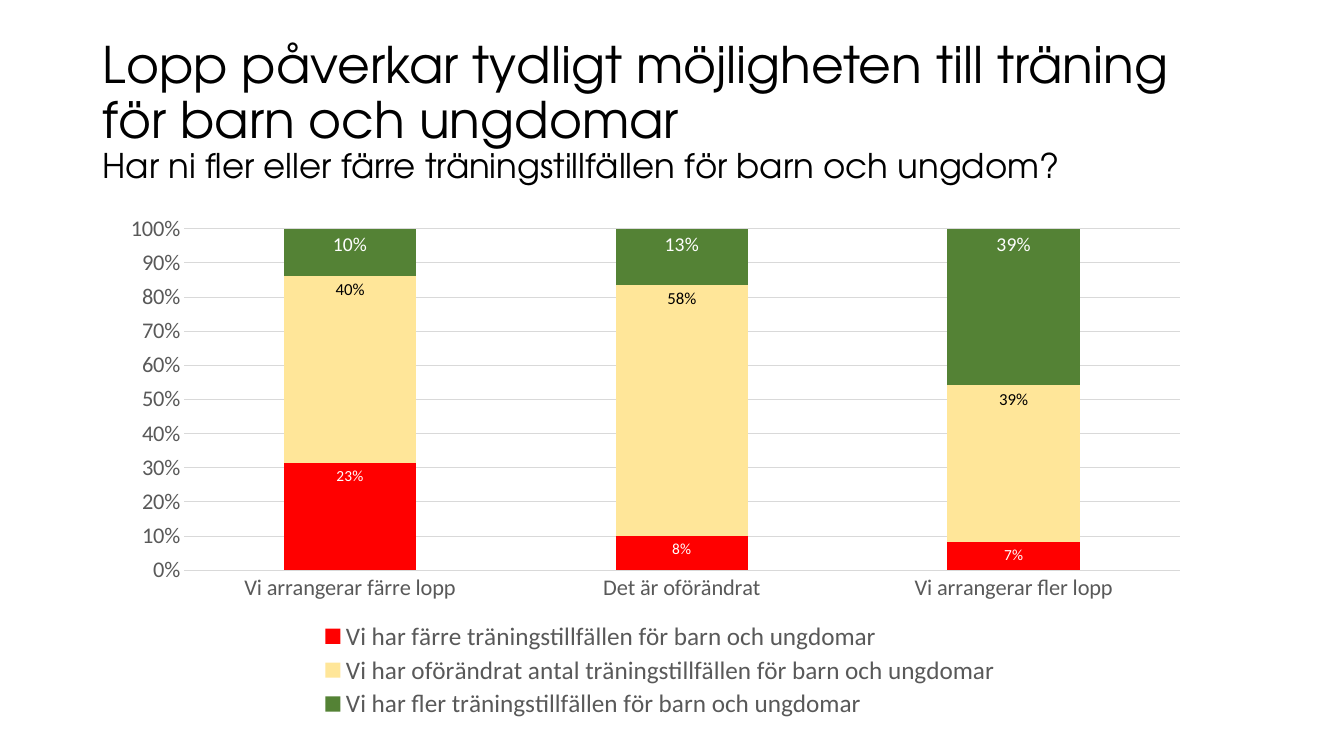
import pptx
import pptx.chart.data
import pptx.dml.color
import pptx.enum.chart
import pptx.enum.text
import pptx.oxml
import pptx.oxml.ns
import pptx.util

COLORS = {
    "black": "000000", "white": "FFFFFF", "gray": "595959", "grid": "D9D9D9",
    "fewer": "FF0000", "unchanged": "FFE699", "more": "548235",
}
WIDTH, HEIGHT = 13.33, 7.5
TITLE_FONT, CHART_FONT = "TeX Gyre Adventor", "Calibri"

CATEGORIES = ["Vi arrangerar färre lopp", "Det är oförändrat", "Vi arrangerar fler lopp"]
# name, values, fill, label size, label color
ANSWERS = [
    ("Vi har färre träningstillfällen för barn och ungdomar",
     (0.23, 0.08, 0.07), "fewer", 11, "white"),
    ("Vi har oförändrat antal träningstillfällen för barn och ungdomar",
     (0.40, 0.58, 0.39), "unchanged", 12, "black"),
    ("Vi har fler träningstillfällen för barn och ungdomar",
     (0.10, 0.13, 0.39), "more", 14, "white"),
]


def set_all(target, values):
    for name, value in values.items():
        setattr(target, name, value)


def rgb(color):
    return pptx.dml.color.RGBColor.from_string(COLORS[color])


def place_chart_part(parent, index, shares, inner=False):
    """Fix a plot area or legend at shares (x, y, w, h) of the chart."""
    for old in parent.findall(pptx.oxml.ns.qn("c:layout")):
        parent.remove(old)
    target = '<c:layoutTarget val="inner"/>' if inner else ""
    modes = '<c:xMode val="edge"/><c:yMode val="edge"/>'
    sizes = "".join(f'<c:{key} val="{share}"/>' for key, share in zip("xywh", shares))
    parent.insert(index, pptx.oxml.parse_xml(
        f'<c:layout {pptx.oxml.ns.nsdecls("c")}><c:manualLayout>'
        f"{target}{modes}{sizes}</c:manualLayout></c:layout>"))


class SlideBuilder:
    def __init__(self, presentation):
        self.slide = presentation.slides.add_slide(presentation.slide_layouts[5])

    def box(self, left, top, width, height):
        """Turn shares of the slide's size into lengths."""
        return [pptx.util.Inches(share * side) for share, side in
                ((left, WIDTH), (top, HEIGHT), (width, WIDTH), (height, HEIGHT))]

    def style_font(self, font, name, size, color):
        set_all(font, {"name": name, "size": pptx.util.Pt(size)})
        font.color.rgb = rgb(color)

    def title(self, shares, lines):
        shape = self.slide.shapes.title
        set_all(shape, dict(zip(("left", "top", "width", "height"), self.box(*shares))))
        set_all(shape.text_frame, {
            "word_wrap": True,
            "auto_size": pptx.enum.text.MSO_AUTO_SIZE.NONE,
            "vertical_anchor": pptx.enum.text.MSO_ANCHOR.MIDDLE,
        })
        paragraph = shape.text_frame.paragraphs[0]
        set_all(paragraph, {"alignment": pptx.enum.text.PP_ALIGN.LEFT, "line_spacing": 0.9})
        for number, (text, size) in enumerate(lines):
            if number:
                paragraph.add_line_break()
            run = paragraph.add_run()
            run.text = text
            self.style_font(run.font, TITLE_FONT, size, "black")

    def stacked_chart(self, shares, categories, answers):
        data = pptx.chart.data.CategoryChartData(number_format="0%")
        data.categories = categories
        for name, values, *_ in answers:
            data.add_series(name, values)
        chart = self.slide.shapes.add_chart(
            pptx.enum.chart.XL_CHART_TYPE.COLUMN_STACKED_100, *self.box(*shares), data).chart
        set_all(chart, {"has_title": False, "has_legend": True})
        self.style_font(chart.font, CHART_FONT, 10, "black")
        plot = chart.plots[0]
        set_all(plot, {"gap_width": 150, "overlap": 100, "vary_by_categories": False})
        for series, (_, _, fill, size, color) in zip(plot.series, answers):
            series.format.fill.solid()
            series.format.fill.fore_color.rgb = rgb(fill)
            labels = series.data_labels
            set_all(labels, {
                "show_value": True, "number_format": "0%", "number_format_is_linked": False,
                "position": pptx.enum.chart.XL_LABEL_POSITION.INSIDE_END,
            })
            self.style_font(labels.font, CHART_FONT, size, color)
        self.axes(chart)
        self.legend(chart.legend)
        place_chart_part(chart.element.chart.plotArea, 0, (0.07, 0.05, 0.91, 0.65), inner=True)

    def axes(self, chart):
        no_mark = pptx.enum.chart.XL_TICK_MARK.NONE
        for axis in (chart.category_axis, chart.value_axis):
            set_all(axis, {"major_tick_mark": no_mark, "minor_tick_mark": no_mark})
            self.style_font(axis.tick_labels.font, CHART_FONT, 16, "gray")
        value_axis = chart.value_axis
        set_all(value_axis, {"has_major_gridlines": True, "minimum_scale": 0,
                             "maximum_scale": 1, "major_unit": 0.1})
        set_all(value_axis.tick_labels, {"number_format": "0%", "number_format_is_linked": False})
        value_axis.format.line.fill.background()
        for part in (chart.category_axis, value_axis.major_gridlines):
            part.format.line.color.rgb = rgb("grid")
            part.format.line.width = pptx.util.Pt(0.75)

    def legend(self, legend):
        set_all(legend, {"position": pptx.enum.chart.XL_LEGEND_POSITION.BOTTOM,
                         "include_in_layout": False})
        self.style_font(legend.font, CHART_FONT, 18, "gray")
        place_chart_part(legend._element, 1, (0.19, 0.79, 0.63, 0.2))


def main():
    presentation = pptx.Presentation()
    set_all(presentation, {"slide_width": pptx.util.Inches(WIDTH),
                           "slide_height": pptx.util.Inches(HEIGHT)})
    builder = SlideBuilder(presentation)
    builder.title((0.069, 0.053, 0.863, 0.193), [
        ("Lopp påverkar tydligt möjligheten till träning för barn och ungdomar", 36),
        ("Har ni fler eller färre träningstillfällen för barn och ungdom?", 24.3),
    ])
    builder.stacked_chart((0.08, 0.268, 0.814, 0.695), CATEGORIES, ANSWERS)
    presentation.save("out.pptx")


if __name__ == "__main__":
    main()
